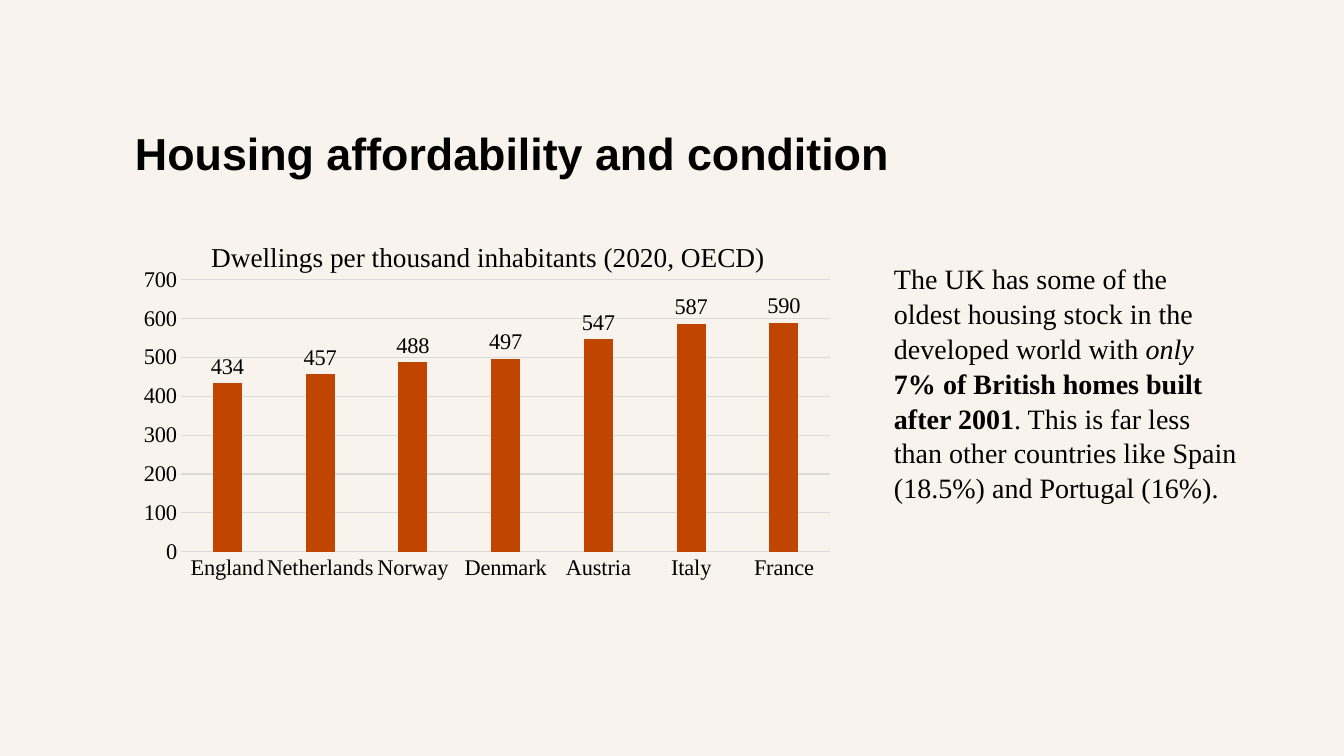
from lxml.etree import SubElement
from pptx import Presentation
from pptx.chart.data import CategoryChartData
from pptx.dml.color import RGBColor
from pptx.enum.chart import XL_CHART_TYPE, XL_LABEL_POSITION, XL_TICK_MARK
from pptx.oxml.ns import qn
from pptx.util import Emu, Pt

PX = 914400 / 100.8
COLORS = {"bg": "F9F3ED", "text": "000000", "bar": "C04500", "grid": "D9D9D9"}
SERIF = "Times New Roman"
DWELLINGS = {"England": 434, "Netherlands": 457, "Norway": 488, "Denmark": 497,
             "Austria": 547, "Italy": 587, "France": 590}


def px(n):
    """Turn pixels into EMU."""
    return Emu(round(n * PX))


def rgb(name):
    """Look up a named colour."""
    return RGBColor.from_string(COLORS[name])


def style_font(font, size, name=SERIF, bold=False, italic=False):
    """Set face, size, weight and colour of a font."""
    font.name, font.size, font.bold, font.italic = name, Pt(size), bold, italic
    font.color.rgb = rgb("text")


def add_text(s, box, runs, size, name=SERIF, spacing=1.0, insets=(10, 5)):
    """Add a wrapped text box of (text, bold, italic) runs."""
    tf = s.shapes.add_textbox(*map(px, box)).text_frame
    tf.word_wrap = True
    tf.margin_left, tf.margin_top = map(px, insets)
    p = tf.paragraphs[0]
    p.line_spacing = spacing
    for text, bold, italic in runs:
        r = p.add_run()
        r.text = text
        style_font(r.font, size, name, bold, italic)


def set_layout(parent, index, **values):
    """Place a chart part by fractions of the chart area."""
    for layout in parent.findall(qn("c:layout")):
        parent.remove(layout)
    layout = SubElement(parent, qn("c:layout"))
    parent.insert(index, layout)
    manual = SubElement(layout, qn("c:manualLayout"))
    for tag, value in values.items():
        SubElement(manual, qn(f"c:{tag}")).set("val", str(value))


def style_axis(axis):
    """Give an axis its text and remove its tick marks."""
    axis.major_tick_mark = axis.minor_tick_mark = XL_TICK_MARK.NONE
    style_font(axis.tick_labels.font, 16)


def style_line(line):
    """Draw a thin pale line."""
    line.color.rgb = rgb("grid")
    line.width = Pt(0.75)


def add_column_chart(s, box, title, values):
    """Add a titled column chart with value labels."""
    data = CategoryChartData()
    data.categories = list(values)
    data.add_series("Series 1", list(values.values()))
    chart = s.shapes.add_chart(XL_CHART_TYPE.COLUMN_CLUSTERED, *map(px, box), data).chart
    style_font(chart.font, 16)
    chart.has_legend = False

    chart.has_title = True
    r = chart.chart_title.text_frame.paragraphs[0].add_run()
    r.text = title
    style_font(r.font, 19.5)

    plot = chart.plots[0]
    plot.vary_by_categories = False
    plot.gap_width, plot.overlap = 219, -27
    fill = plot.series[0].format.fill
    fill.solid()
    fill.fore_color.rgb = rgb("bar")
    plot.has_data_labels = True
    labels = plot.data_labels
    labels.show_value = True
    labels.position = XL_LABEL_POSITION.OUTSIDE_END
    style_font(labels.font, 16)

    chart_part = chart.element.find(qn("c:chart"))
    set_layout(chart_part.find(qn("c:title")), 1, xMode="edge", yMode="edge", x=0.11, y=0.05)
    set_layout(chart_part.find(qn("c:plotArea")), 0, layoutTarget="inner",
               xMode="edge", yMode="edge", x=0.075, y=0.155, w=0.902, h=0.638)

    style_axis(chart.category_axis)
    style_line(chart.category_axis.format.line)
    axis = chart.value_axis
    style_axis(axis)
    axis.minimum_scale, axis.maximum_scale, axis.major_unit = 0, 700, 100
    axis.format.line.fill.background()
    style_line(axis.major_gridlines.format.line)


def main():
    """Build and save the slide."""
    prs = Presentation()
    prs.slide_width, prs.slide_height = px(1344), px(756)
    s = prs.slides.add_slide(prs.slide_layouts[6])
    s.background.fill.solid()
    s.background.fill.fore_color.rgb = rgb("bg")
    add_text(s, (127, 116, 1088, 59), [("Housing affordability and condition", True, False)],
             32, "Arial", insets=(8, 10))
    add_column_chart(s, (127, 214, 720, 426),
                     "Dwellings per thousand inhabitants (2020, OECD)", DWELLINGS)
    add_text(s, (884, 255, 365, 248), [
        ("The UK has some of the oldest housing stock in the developed world with ", False, False),
        ("only ", False, True),
        ("7% of British homes built after 2001", True, False),
        (". This is far less than other countries like Spain (18.5%) and Portugal (16%).",
         False, False),
    ], 20, spacing=1.04)
    prs.save("out.pptx")


if __name__ == "__main__":
    main()
